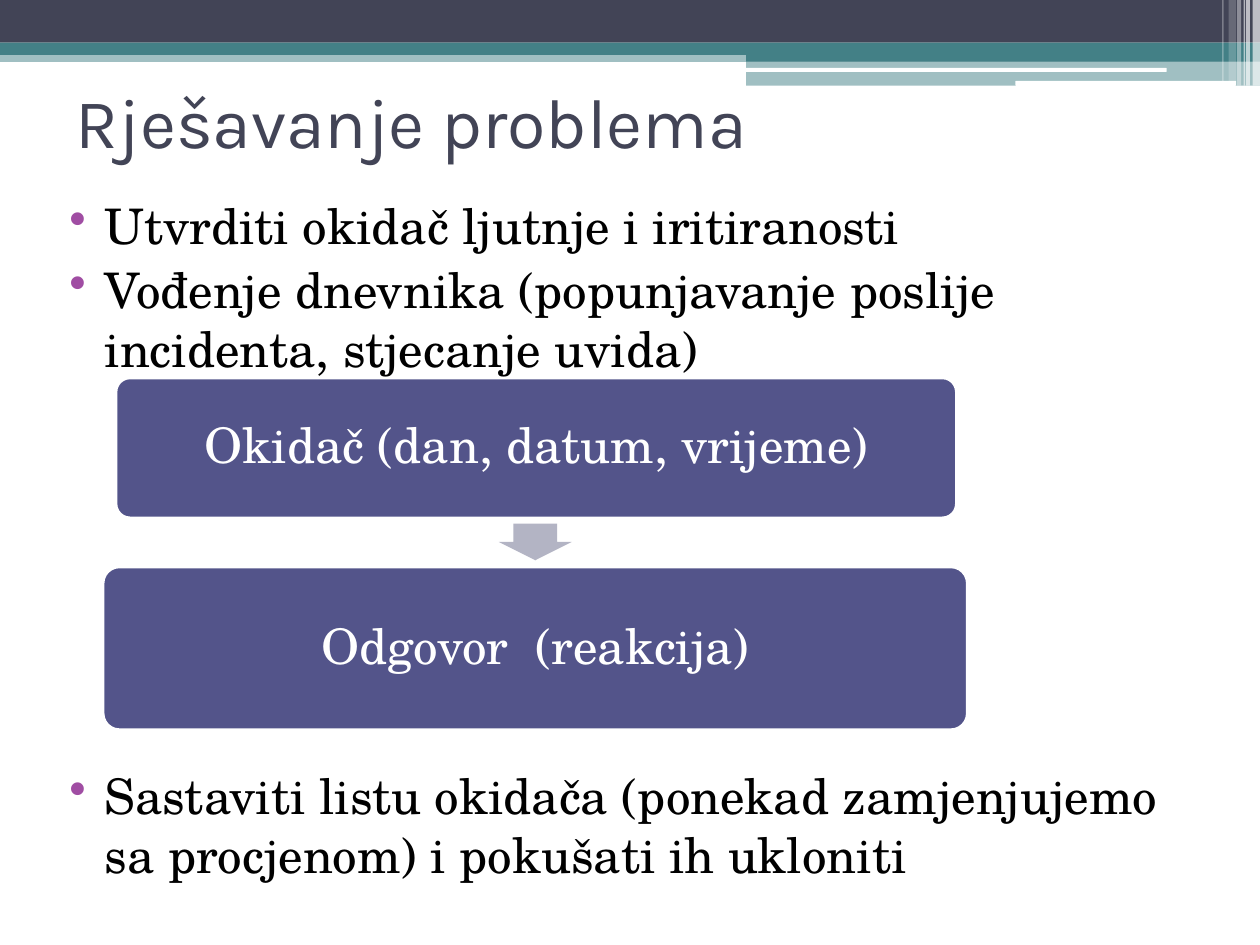
"""Build the slide on problem solving, with its trigger and response flow."""
from lxml import etree
from pptx import Presentation
from pptx.dml.color import RGBColor
from pptx.enum.shapes import MSO_SHAPE
from pptx.enum.text import MSO_ANCHOR, PP_ALIGN
from pptx.oxml.ns import qn
from pptx.util import Cm, Pt

RECT = MSO_SHAPE.RECTANGLE
ROUND = MSO_SHAPE.ROUNDED_RECTANGLE
ARROW = MSO_SHAPE.RIGHT_ARROW
MIDDLE = MSO_ANCHOR.MIDDLE
CENTER = PP_ALIGN.CENTER

DARK, TEAL, WHITE = "424456", "438086", "FFFFFF"
BLUE, GREY, PURPLE, BLACK = "53548A", "B3B4C4", "A04DA3", "000000"
SERIF = {"name": "TeX Gyre Schola", "size": Pt(28)}


def paint(fill, code):
    fill.solid()
    fill.fore_color.rgb = RGBColor.from_string(code)


def style(part, vals):
    for key, val in vals.items():
        setattr(part, key, val)


deck = Presentation()
style(deck, {"slide_width": Cm(25.4), "slide_height": Cm(19.05)})
slide = deck.slides.add_slide(deck.slide_layouts[6])
shapes = slide.shapes

bars = [
    (RECT, 0, 1.02, 25.4, 0.23, TEAL, 50),
    (RECT, 0, 0, 25.4, 0.86, DARK, 100),
    (RECT, 0, 0.86, 25.4, 0.25, TEAL, 100),
    (RECT, 15.04, 0.99, 10.36, 0.25, TEAL, 100),
    (RECT, 15.04, 1.22, 10.36, 0.51, TEAL, 50),
    (ROUND, 15.01, 1.37, 8.51, 0.08, WHITE, 100),
    (ROUND, 20.47, 1.63, 4.45, 0.1, WHITE, 100),
    (RECT, 25.25, 0, 0.15, 1.73, WHITE, 65),
    (RECT, 25.12, 0, 0.08, 1.73, WHITE, 65),
    (RECT, 25.07, 0, 0.03, 1.73, WHITE, 60),
    (RECT, 24.94, 0, 0.08, 1.73, WHITE, 40),
    (RECT, 24.77, 0, 0.15, 1.63, WHITE, 20),
    (RECT, 24.64, 0, 0.03, 1.63, WHITE, 30),
]
for kind, left, top, width, height, code, alpha in bars:
    bar = shapes.add_shape(kind, Cm(left), Cm(top), Cm(width), Cm(height))
    bar.shadow.inherit = False
    paint(bar.fill, code)
    bar.line.fill.background()
    if alpha < 100:
        tint = bar.element.spPr.find(qn("a:solidFill"))[0]
        etree.SubElement(tint, qn("a:alpha"), val=str(alpha * 1000))

title = shapes.add_textbox(Cm(1.27), Cm(0.84), Cm(22.86), Cm(3.18))
style(title.text_frame, {"word_wrap": True, "vertical_anchor": MIDDLE})
para = title.text_frame.paragraphs[0]
para.text = "Rješavanje problema"
style(para.font, {"name": "Karla", "size": Pt(40)})
paint(para.font.fill, DARK)

body = shapes.add_textbox(Cm(0.84), Cm(3.81), Cm(22.86), Cm(14.81))
frame = body.text_frame
frame.word_wrap = True
points = [
    ("Utvrditi okidač ljutnje i iritiranosti", 0),
    ("Vođenje dnevnika (popunjavanje poslije incidenta, stjecanje uvida)", 3),
    ("Sastaviti listu okidača (ponekad zamjenjujemo sa procjenom) "
     "i pokušati ih ukloniti", 222),
]
for rank, (text, gap) in enumerate(points):
    para = frame.add_paragraph() if rank else frame.paragraphs[0]
    para.text = text
    props = para._p.get_or_add_pPr()
    props.set("marL", str(Cm(1.02)))
    props.set("indent", str(Cm(-0.71)))
    tint = etree.SubElement(props, qn("a:buClr"))
    etree.SubElement(tint, qn("a:srgbClr"), val=PURPLE)
    etree.SubElement(props, qn("a:buChar"), char="•")
    para.space_before = Pt(gap)
    style(para.font, SERIF)
    paint(para.font.fill, BLACK)

steps = [
    ("Okidač (dan, datum, vrijeme)", 2.34, 7.62, 16.94, 2.82),
    ("Odgovor  (reakcija)", 2.08, 11.43, 17.42, 3.28),
]
sides = ("left", "top", "right", "bottom")
inset = {f"margin_{side}": Cm(0.4) for side in sides}
for text, left, top, width, height in steps:
    step = shapes.add_shape(ROUND, Cm(left), Cm(top), Cm(width), Cm(height))
    step.shadow.inherit = False
    step.adjustments[0] = 0.1
    paint(step.fill, BLUE)
    paint(step.line.fill, WHITE)
    step.line.width = Pt(1.5)
    style(step.text_frame,
          {"word_wrap": True, "vertical_anchor": MIDDLE, **inset})
    para = step.text_frame.paragraphs[0]
    para.text = text
    style(para, {"alignment": CENTER, "line_spacing": 0.9})
    style(para.font, SERIF)
    paint(para.font.fill, WHITE)

arrow = shapes.add_shape(ARROW, Cm(10.42), Cm(10.19), Cm(0.74), Cm(1.47))
arrow.shadow.inherit = False
arrow.rotation = 90
arrow.adjustments[0] = 0.6
arrow.adjustments[1] = 0.5
paint(arrow.fill, GREY)
arrow.line.fill.background()

deck.save("out.pptx")
